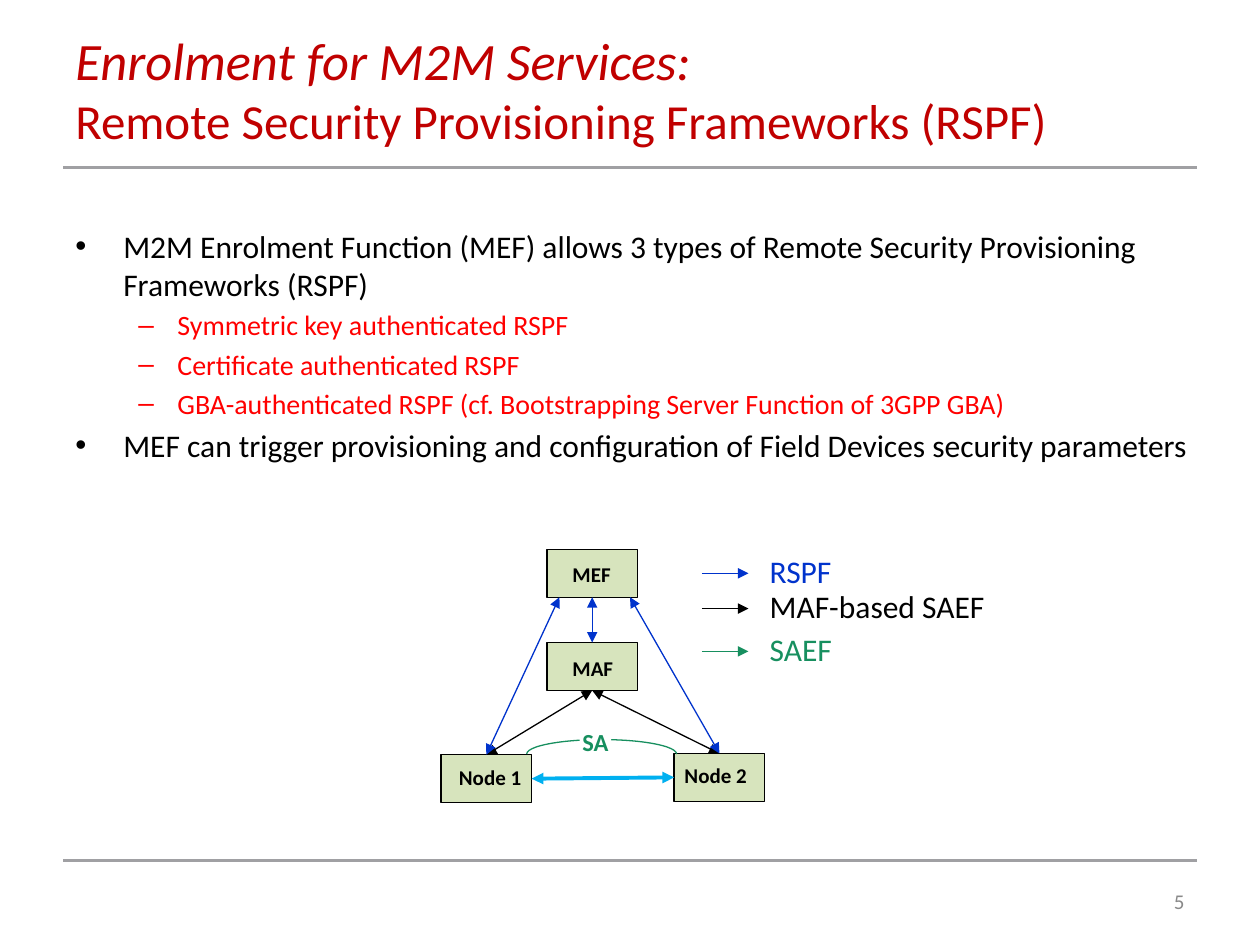
from dataclasses import dataclass

import pptx
import pptx.dml.color
import pptx.enum.shapes
import pptx.enum.text
import pptx.oxml.ns
import pptx.util
from lxml import etree

Inches = pptx.util.Inches
Pt = pptx.util.Pt
Shape = pptx.enum.shapes.MSO_SHAPE
Align = pptx.enum.text.PP_ALIGN
Anchor = pptx.enum.text.MSO_ANCHOR
qn = pptx.oxml.ns.qn


@dataclass(frozen=True)
class Theme:
    font: str = "Calibri"
    title: str = "C00000"
    ink: str = "000000"
    accent: str = "FF0000"
    rule: str = "A0A0A3"
    muted: str = "898989"
    node: str = "D7E4BD"
    rspf: str = "0033CC"
    saef: str = "178F5F"
    link: str = "00B0F0"
    paper: str = "FFFFFF"
    title_size: int = 30
    subtitle_size: int = 28
    body_size: int = 18
    sub_size: int = 16
    sa_size: int = 14
    label_size: int = 12


THEME = Theme()
NODE_W, NODE_H = 0.72, 0.38
TOP, LEFT, BOTTOM, RIGHT = range(4)


def rgb(value):
    return pptx.dml.color.RGBColor.from_string(value)


def add_paragraph(tf, text, size=THEME.body_size, color=THEME.ink, bold=False,
                  italic=False, align=Align.LEFT):
    """Write into the empty first paragraph, or append a new one."""
    p = tf.paragraphs[0]
    if p.runs:
        p = tf.add_paragraph()
    p.alignment = align
    r = p.add_run()
    r.text = text
    r.font.name = THEME.font
    r.font.size = Pt(size)
    r.font.bold = bold
    r.font.italic = italic
    r.font.color.rgb = rgb(color)
    return p


def add_textbox(slide, x, y, w, h, wrap=True, anchor=Anchor.TOP):
    tf = slide.shapes.add_textbox(Inches(x), Inches(y), Inches(w), Inches(h)).text_frame
    tf.word_wrap = wrap
    tf.vertical_anchor = anchor
    return tf


def add_bullet(tf, text, char, margin, hang, **fmt):
    p = add_paragraph(tf, text, **fmt)
    pPr = p._p.get_or_add_pPr()
    pPr.set("marL", str(Inches(margin)))
    pPr.set("indent", str(-Inches(hang)))
    before = etree.SubElement(pPr, qn("a:spcBef"))
    etree.SubElement(before, qn("a:spcPct")).set("val", "20000")
    etree.SubElement(pPr, qn("a:buFont")).set("typeface", "Arial")
    etree.SubElement(pPr, qn("a:buChar")).set("char", char)
    return p


def add_shape(slide, kind, x, y, w, h, fill=None, line=None):
    sp = slide.shapes.add_shape(kind, Inches(x), Inches(y), Inches(w), Inches(h))
    sp.shadow.inherit = False
    if fill:
        sp.fill.solid()
        sp.fill.fore_color.rgb = rgb(fill)
    else:
        sp.fill.background()
    if line:
        sp.line.color.rgb = rgb(line)
        sp.line.width = Pt(0.75)
    else:
        sp.line.fill.background()
    return sp


def add_line(slide, start, end, color, width=0.75, heads=(), begin=None, finish=None):
    """Draw a line; begin and finish are (shape, side) pairs to join."""
    cxn = slide.shapes.add_connector(
        pptx.enum.shapes.MSO_CONNECTOR.STRAIGHT, *map(Inches, start + end))
    cxn.line.color.rgb = rgb(color)
    cxn.line.width = Pt(width)
    ln = cxn.line._get_or_add_ln()
    for head in heads:
        etree.SubElement(ln, qn(head)).set("type", "triangle")
    etree.SubElement(cxn._element.spPr, qn("a:effectLst"))
    if begin:
        cxn.begin_connect(*begin)
    if finish:
        cxn.end_connect(*finish)


def add_node(slide, name, x, y, label_x, label_y, label_w):
    sp = add_shape(slide, Shape.RECTANGLE, x, y, NODE_W, NODE_H, THEME.node, THEME.ink)
    tf = add_textbox(slide, label_x, label_y, label_w, 0.3, wrap=False)
    add_paragraph(tf, name, size=THEME.label_size, bold=True, align=Align.CENTER)
    return sp


def add_title(slide):
    tf = add_textbox(slide, 0.5, 0.17, 9, 1.33)
    add_paragraph(tf, "Enrolment for M2M Services:", size=THEME.title_size,
                  color=THEME.title, italic=True)
    add_paragraph(tf, "Remote Security Provisioning Frameworks (RSPF)",
                  size=THEME.subtitle_size, color=THEME.title)


def add_body(slide):
    tf = add_textbox(slide, 0.5, 1.75, 9.25, 2.85)
    main_item = dict(char="•", margin=0.38, hang=0.38)
    sub_item = dict(char="–", margin=0.81, hang=0.31, size=THEME.sub_size,
                    color=THEME.accent)
    add_bullet(tf, "M2M Enrolment Function (MEF) allows 3 types of Remote Security "
               "Provisioning Frameworks (RSPF)", **main_item)
    for text in ("Symmetric key authenticated RSPF",
                 "Certificate authenticated RSPF",
                 "GBA-authenticated RSPF (cf. Bootstrapping Server Function of 3GPP GBA)"):
        add_bullet(tf, text, **sub_item).level = 1
    add_bullet(tf, "MEF can trigger provisioning and configuration of Field Devices "
               "security parameters", **main_item)


def add_association(slide):
    """Arch over the two nodes, made of mirrored arcs with a label on top."""
    for flipped in (False, True):
        arc = add_shape(slide, Shape.ARC, 4.18, 5.87, 1.19, 0.23, line=THEME.saef)
        if flipped:
            arc._element.spPr.xfrm.set("flipH", "1")
    tf = add_shape(slide, Shape.RECTANGLE, 4.6, 5.77, 0.25, 0.24, THEME.paper).text_frame
    tf.margin_left = tf.margin_right = tf.margin_top = tf.margin_bottom = 0
    tf.word_wrap = False
    tf.vertical_anchor = Anchor.TOP
    add_paragraph(tf, "SA", size=THEME.sa_size, color=THEME.saef, bold=True,
                  align=Align.CENTER)


def add_diagram(slide):
    node1 = add_node(slide, "Node 1", 3.5, 5.99, 3.53, 6.02, 0.72)
    node2 = add_node(slide, "Node 2", 5.35, 5.98, 5.33, 6, 0.7)
    add_association(slide)
    maf = add_node(slide, "MAF", 4.34, 5.1, 4.44, 5.15, 0.53)
    mef = add_node(slide, "MEF", 4.34, 4.36, 4.44, 4.41, 0.51)

    both = ("a:headEnd", "a:tailEnd")
    add_line(slide, (4.22, 6.18), (5.35, 6.17), THEME.link, 2.25, both,
             (node1, RIGHT), (node2, LEFT))
    for node, x, mef_x in ((node1, 3.86, 4.44), (node2, 5.71, 5)):
        add_line(slide, (x, 5.99), (4.7, 5.48), THEME.ink, heads=both,
                 begin=(node, TOP), finish=(maf, BOTTOM))
        add_line(slide, (x, 5.99), (mef_x, 4.74), THEME.rspf, heads=both,
                 begin=(node, TOP))
    add_line(slide, (4.7, 4.74), (4.7, 5.1), THEME.rspf, heads=both,
             begin=(mef, BOTTOM), finish=(maf, TOP))


def add_legend(slide):
    for text, y, width, color in (("RSPF", 4.55, 0.7, THEME.rspf),
                                  ("MAF-based SAEF", 4.83, 1.92, THEME.ink),
                                  ("SAEF", 5.17, 0.7, THEME.saef)):
        add_line(slide, (5.57, y), (5.94, y), color, heads=("a:tailEnd",))
        tf = add_textbox(slide, 6.01, y - 0.22, width, 0.4, wrap=False)
        add_paragraph(tf, text, color=color)


def main():
    prs = pptx.Presentation()
    prs.slide_width, prs.slide_height = Inches(10), Inches(7.5)
    slide = prs.slides.add_slide(prs.slide_layouts[6])
    for y in (6.83, 1.33):
        add_line(slide, (0.5, y), (9.5, y), THEME.rule, 1.75)
    add_title(slide)
    add_body(slide)
    tf = add_textbox(slide, 7.17, 6.95, 2.33, 0.4, anchor=Anchor.MIDDLE)
    add_paragraph(tf, "5", size=THEME.label_size, color=THEME.muted, align=Align.RIGHT)
    add_diagram(slide)
    add_legend(slide)
    prs.save("out.pptx")


if __name__ == "__main__":
    main()
